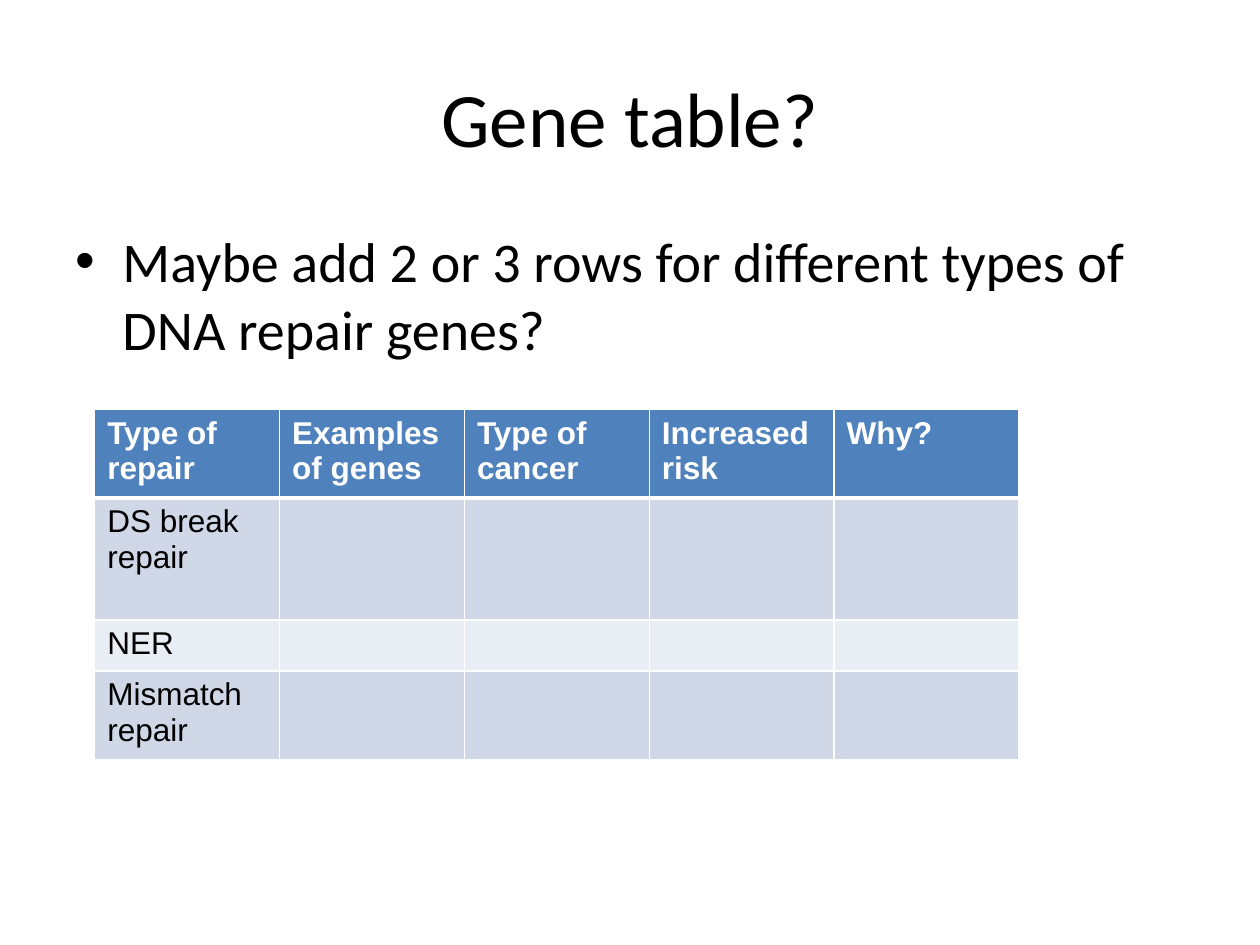
from dataclasses import dataclass

from lxml.etree import SubElement
from pptx import Presentation
from pptx.dml.color import RGBColor
from pptx.enum.text import MSO_ANCHOR, PP_ALIGN
from pptx.oxml.ns import qn
from pptx.util import Cm, Pt


@dataclass(frozen=True)
class Theme:
    ink: str = "000000"
    paper: str = "FFFFFF"
    header: str = "4F81BD"
    bands: tuple = ("D0D8E8", "E9EDF4")
    text_font: str = "Calibri"
    table_font: str = "Arial"
    title_size: int = 44
    body_size: int = 32
    table_size: int = 18
    rule: int = 1
    header_rule: int = 3


def write(frame, text, *, font, size, color, bold=False, align=PP_ALIGN.LEFT):
    paragraph = frame.paragraphs[0]
    paragraph.alignment = align
    # The paragraph font also sizes cells that hold no text
    paragraph.font.size = Pt(size)
    if text:
        run = paragraph.add_run()
        run.text = text
        run.font.name = font
        run.font.size = Pt(size)
        run.font.bold = bold
        run.font.color.rgb = RGBColor.from_string(color)
    return paragraph


def add_bullet(paragraph, indent):
    properties = paragraph._p.get_or_add_pPr()
    properties.set("marL", str(indent))
    properties.set("indent", str(-indent))
    SubElement(properties, qn("a:buFont"), typeface="Arial")
    SubElement(properties, qn("a:buChar"), char="•")


def set_borders(cell, color, **widths):
    """Draw the cell's edges; widths are points keyed by L, R, T and B."""
    properties = cell._tc.get_or_add_tcPr()
    for edge in "LRTB":
        line = SubElement(properties, qn(f"a:ln{edge}"), w=str(Pt(widths[edge])))
        SubElement(SubElement(line, qn("a:solidFill")), qn("a:srgbClr"), val=color)


class SlideBuilder:
    def __init__(self, slide, theme):
        self.slide = slide
        self.theme = theme

    def text_frame(self, left, top, width, height, anchor):
        box = self.slide.shapes.add_textbox(Cm(left), Cm(top), Cm(width), Cm(height))
        frame = box.text_frame
        frame.word_wrap = True
        frame.vertical_anchor = anchor
        return frame

    def title(self, text, *place):
        theme = self.theme
        write(self.text_frame(*place, MSO_ANCHOR.MIDDLE), text, font=theme.text_font,
              size=theme.title_size, color=theme.ink, align=PP_ALIGN.CENTER)

    def bullet(self, text, *place):
        theme = self.theme
        paragraph = write(self.text_frame(*place, MSO_ANCHOR.TOP), text,
                          font=theme.text_font, size=theme.body_size, color=theme.ink)
        add_bullet(paragraph, Cm(0.95))

    def table(self, headings, first_column, left, top, width, row_heights):
        rows = [headings] + [[name] + [""] * (len(headings) - 1) for name in first_column]
        table = self.slide.shapes.add_table(
            len(rows), len(headings), Cm(left), Cm(top), Cm(width), Cm(sum(row_heights))
        ).table
        for row, height in zip(table.rows, row_heights):
            row.height = Cm(height)
        for row_index, texts in enumerate(rows):
            for column_index, text in enumerate(texts):
                self.cell(table.cell(row_index, column_index), text, row_index)

    def cell(self, cell, text, row_index):
        theme = self.theme
        is_header = row_index == 0
        set_borders(cell, theme.paper, L=theme.rule, R=theme.rule,
                    T=theme.header_rule if row_index == 1 else theme.rule,
                    B=theme.header_rule if is_header else theme.rule)
        fill = theme.header if is_header else theme.bands[(row_index - 1) % 2]
        cell.fill.solid()
        cell.fill.fore_color.rgb = RGBColor.from_string(fill)
        write(cell.text_frame, text, font=theme.table_font, size=theme.table_size,
              color=theme.paper if is_header else theme.ink, bold=is_header)


def main():
    presentation = Presentation()
    presentation.slide_width, presentation.slide_height = Cm(25.4), Cm(19.05)
    slide = presentation.slides.add_slide(presentation.slide_layouts[6])

    builder = SlideBuilder(slide, Theme())
    builder.title("Gene table?", 1.27, 0.76, 22.86, 3.18)
    builder.bullet("Maybe add 2 or 3 rows for different types of DNA repair genes?",
                   1.27, 4.45, 22.86, 12.57)
    builder.table(
        ["Type of repair", "Examples of genes", "Type of cancer", "Increased risk", "Why?"],
        ["DS break repair", "NER", "Mismatch repair"],
        left=1.91, top=8.26, width=18.63, row_heights=[1.66, 2.46, 1.03, 1.66],
    )
    presentation.save("out.pptx")


if __name__ == "__main__":
    main()
